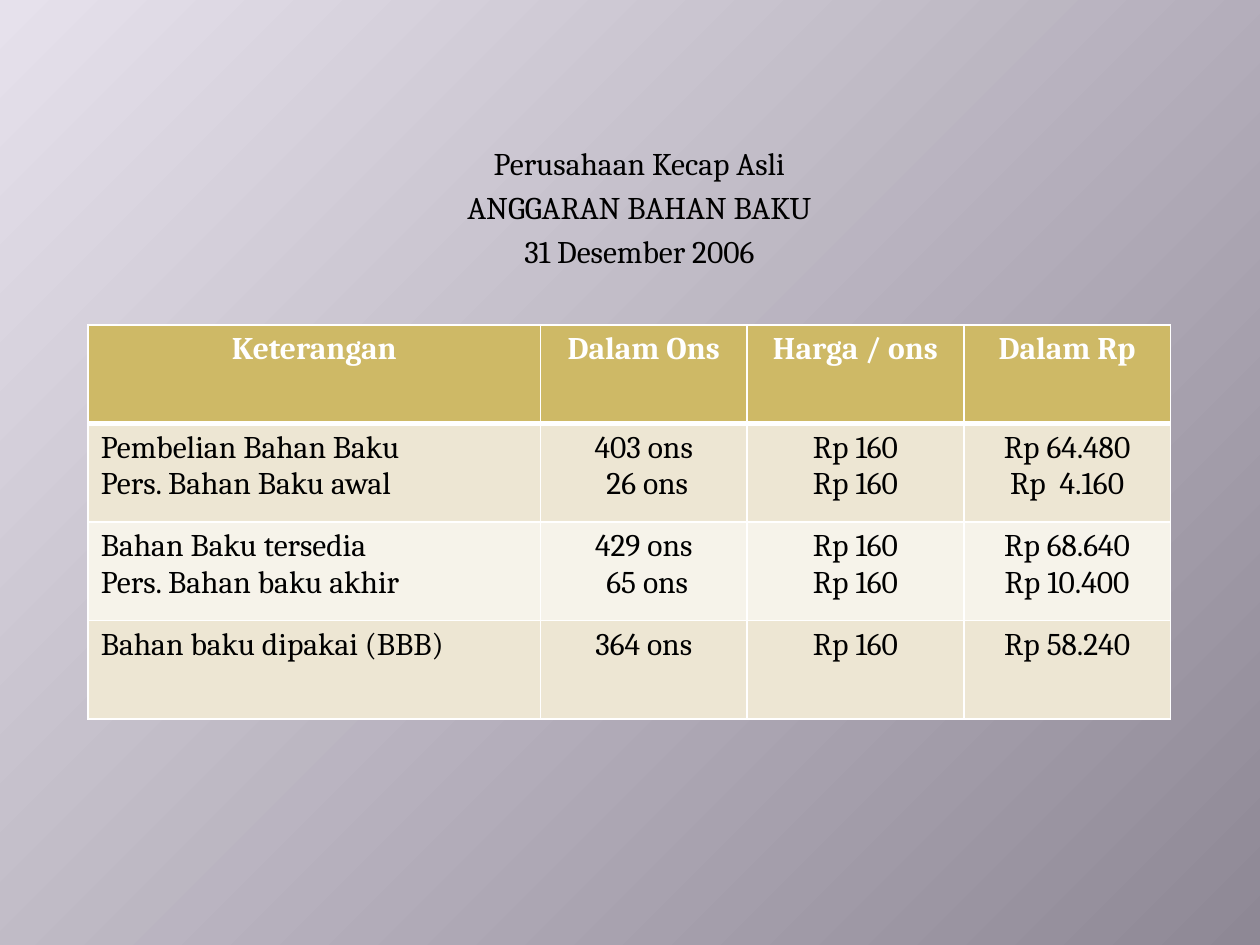
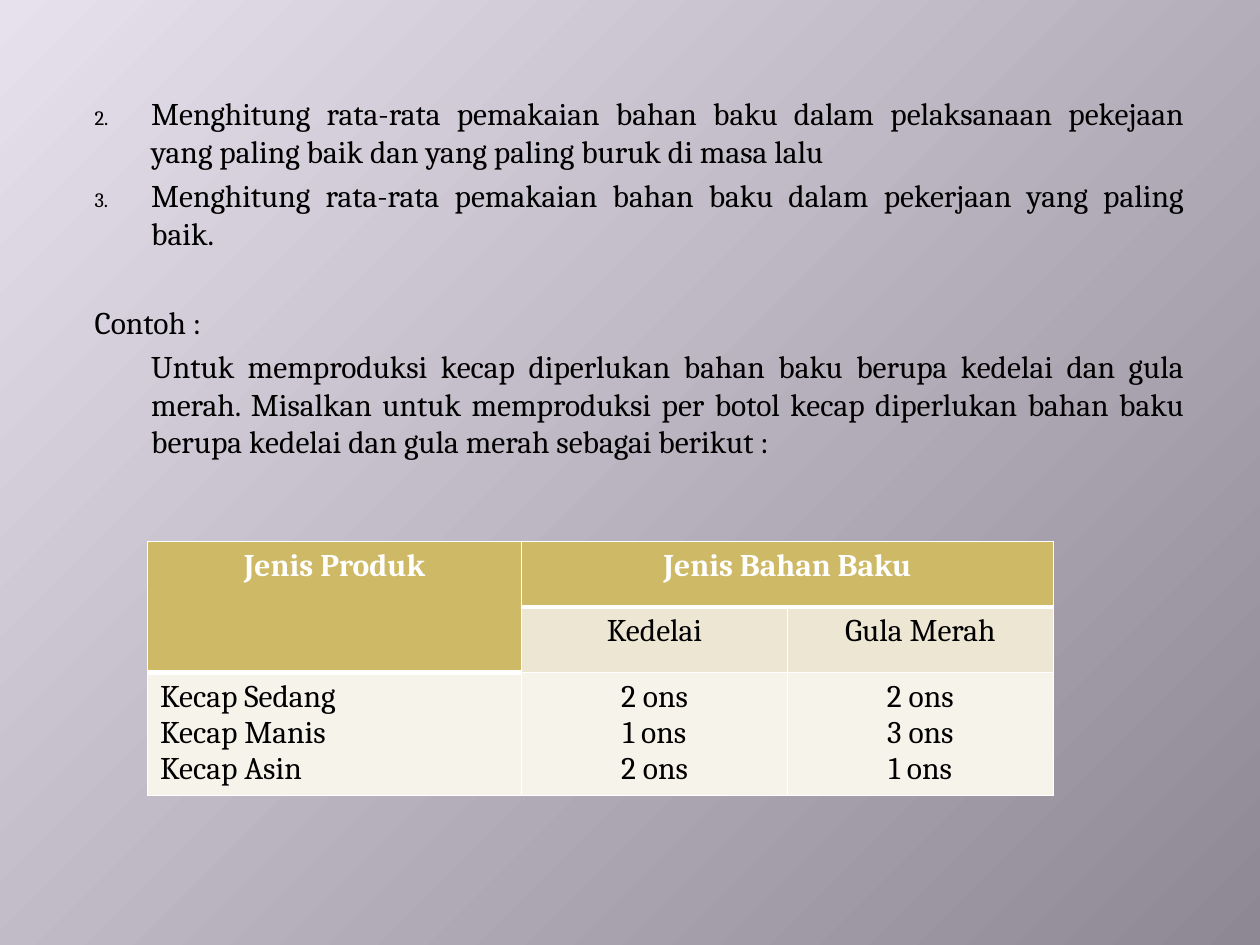
from dataclasses import dataclass

from lxml.etree import SubElement
from pptx import Presentation
from pptx.dml.color import RGBColor
from pptx.enum.text import MSO_AUTO_SIZE, PP_ALIGN
from pptx.oxml.ns import qn
from pptx.util import Emu, Inches, Pt

COLORS = {
    "light": "E6E1EC",
    "dark": "8E8895",
    "ink": "000000",
    "white": "FFFFFF",
    "header": "CEB966",
    "odd_row": "EDE6D3",
    "even_row": "F6F3EA",
}
BODY_FONT = {"name": "Cambria", "size": Pt(18), "bold": False}
HEADER_FONT = {**BODY_FONT, "bold": True}
SLIDE_WIDTH, SLIDE_HEIGHT = Inches(10), Inches(7.5)
TEXT_INDENT, HANGING = Inches(0.6), Inches(-0.45)
THIN, THICK = Pt(1), Pt(3)


@dataclass
class Box:
    """Hold a region in percent of the slide's width and height."""

    left: float
    top: float
    width: float
    height: float

    def lengths(self):
        """Return left, top, width and height as lengths."""
        return [
            Emu(int(share * side / 100))
            for share, side in (
                (self.left, SLIDE_WIDTH),
                (self.top, SLIDE_HEIGHT),
                (self.width, SLIDE_WIDTH),
                (self.height, SLIDE_HEIGHT),
            )
        ]


def rgb(color):
    """Return the named palette colour."""
    return RGBColor.from_string(COLORS[color])


def add_element(parent, tag, **attributes):
    """Append a drawing element with the given attributes."""
    return SubElement(
        parent, qn(tag), {key: str(value) for key, value in attributes.items()}
    )


def format_text(para, font, color):
    """Apply font values and a colour to every run of a paragraph."""
    for span in para.runs:
        for attribute, value in font.items():
            setattr(span.font, attribute, value)
        span.font.color.rgb = rgb(color)


def paint_background(master):
    """Give all slides a gradient spreading from the top left corner."""
    fill = master.background.fill
    fill.gradient()
    for stop, color in zip(fill.gradient_stops, ("light", "dark")):
        stop.color.rgb = rgb(color)
    gradient = master.element.find(".//" + qn("a:gradFill"))
    gradient.remove(gradient.find(qn("a:lin")))
    center = add_element(gradient, "a:path", path="circle")
    add_element(center, "a:fillToRect", r=100000, b=100000)


def add_page(deck):
    """Add a slide that keeps only its body placeholder."""
    page = deck.slides.add_slide(deck.slide_layouts[1])
    title = page.shapes.title.element
    title.getparent().remove(title)
    return page


def set_bullet(para, first_number, indent):
    """Set the indents and, if numbered, the small number of a paragraph."""
    properties = para._p.get_or_add_pPr()
    properties.set("marL", str(TEXT_INDENT))
    properties.set("indent", str(indent))
    if first_number is None:
        add_element(properties, "a:buNone")
        return
    bullet_color = add_element(properties, "a:buClr")
    add_element(bullet_color, "a:srgbClr", val=COLORS["ink"])
    add_element(properties, "a:buSzPct", val=65000)
    add_element(
        properties, "a:buAutoNum", type="arabicPeriod", startAt=first_number
    )


def fill_body(page, box, entries, alignment):
    """Place the body and write (text, first number, indent, gap) entries."""
    body = page.placeholders[1]
    body.left, body.top, body.width, body.height = box.lengths()
    frame = body.text_frame
    frame.auto_size = MSO_AUTO_SIZE.NONE
    frame.text = "\n".join(entry[0] for entry in entries)
    for para, (_, first_number, indent, gap) in zip(frame.paragraphs, entries):
        para.alignment = alignment
        set_bullet(para, first_number, indent)
        if gap:
            para.space_before = gap
        format_text(para, BODY_FONT, "ink")


def draw_borders(cell, top, bottom):
    """Draw white borders around a cell."""
    properties = cell._tc.get_or_add_tcPr()
    sides = {"a:lnL": THIN, "a:lnR": THIN, "a:lnT": top, "a:lnB": bottom}
    for tag, width in sides.items():
        line = add_element(properties, tag, w=width)
        solid = add_element(line, "a:solidFill")
        add_element(solid, "a:srgbClr", val=COLORS["white"])


def style_cell(table, row, column):
    """Style a cell as header or as part of a banded row."""

    def is_header(row_index):
        return row_index == 0 or table.cell(row_index, column).is_spanned

    cell = table.cell(row, column)
    header = is_header(row)
    below_header = not header and is_header(row - 1)
    draw_borders(cell, THICK if below_header else THIN, THICK if header else THIN)
    band = "odd_row" if row % 2 else "even_row"
    cell.fill.solid()
    cell.fill.fore_color.rgb = rgb("header" if header else band)
    centered = header or column > 0
    for para in cell.text_frame.paragraphs:
        para.alignment = PP_ALIGN.CENTER if centered else PP_ALIGN.LEFT
        if header:
            format_text(para, HEADER_FONT, "white")
        else:
            format_text(para, BODY_FONT, "ink")


def add_budget_table(page, box, columns, rows, content, merges=()):
    """Fill the box with a table whose columns and rows share it by weight."""
    left, top, width, height = box.lengths()
    table = page.shapes.add_table(
        len(rows), len(columns), left, top, width, height
    ).table
    for column, weight in zip(table.columns, columns):
        column.width = int(width * weight / sum(columns))
    for row, weight in zip(table.rows, rows):
        row.height = int(height * weight / sum(rows))
    for first, last in merges:
        table.cell(*first).merge(table.cell(*last))
    for row, texts in enumerate(content):
        for column, text in enumerate(texts):
            if text:
                table.cell(row, column).text = text
            style_cell(table, row, column)


def build_budget_page(deck):
    """Build the raw material budget slide."""
    page = add_page(deck)
    heading = ("Perusahaan Kecap Asli", "ANGGARAN BAHAN BAKU", "31 Desember 2006")
    fill_body(
        page,
        Box(5, 14.53, 90, 77.47),
        [(text, None, HANGING, None) for text in heading],
        PP_ALIGN.CENTER,
    )
    price = "Rp 160"
    content = (
        ("Keterangan", "Dalam Ons", "Harga / ons", "Dalam Rp"),
        (
            "Pembelian Bahan Baku\nPers. Bahan Baku awal",
            "403 ons\n 26 ons",
            f"{price}\n{price}",
            "Rp 64.480\nRp  4.160",
        ),
        (
            "Bahan Baku tersedia\nPers. Bahan baku akhir",
            "429 ons\n 65 ons",
            f"{price}\n{price}",
            "Rp 68.640\nRp 10.400",
        ),
        ("Bahan baku dipakai (BBB)", "364 ons", price, "Rp 58.240"),
    )
    add_budget_table(
        page,
        Box(7, 34.4, 85.9, 41.7),
        (3.59, 1.64, 1.72, 1.64),
        (1, 1, 1, 1),
        content,
    )


def build_usage_page(deck):
    """Build the slide on average usage with its example."""
    page = add_page(deck)
    entries = (
        (
            "Menghitung rata-rata pemakaian bahan baku dalam pelaksanaan "
            "pekejaan yang paling baik dan yang paling buruk di masa lalu",
            2, HANGING, None,
        ),
        (
            "Menghitung rata-rata pemakaian bahan baku dalam pekerjaan "
            "yang paling baik.",
            2, HANGING, None,
        ),
        ("Contoh :", None, HANGING, Pt(29)),
        (
            "Untuk memproduksi kecap diperlukan bahan baku berupa kedelai dan "
            "gula merah. Misalkan untuk memproduksi per botol kecap diperlukan "
            "bahan baku berupa kedelai dan gula merah sebagai berikut :",
            None, 0, None,
        ),
    )
    fill_body(page, Box(5, 9.33, 90, 82.67), entries, PP_ALIGN.JUSTIFY)
    content = (
        ("Jenis Produk", "Jenis Bahan Baku", ""),
        ("", "Kedelai", "Gula Merah"),
        (
            "Kecap Sedang\nKecap Manis\nKecap Asin",
            "2 ons\n1 ons\n2 ons",
            "2 ons\n3 ons\n1 ons",
        ),
    )
    add_budget_table(
        page,
        Box(11.7, 57.3, 71.9, 26.9),
        (2.97, 2.11, 2.11),
        (0.52, 0.52, 0.98),
        content,
        merges=(((0, 0), (1, 0)), ((0, 1), (0, 2))),
    )


def main():
    """Build and save the deck."""
    deck = Presentation()
    deck.slide_width, deck.slide_height = SLIDE_WIDTH, SLIDE_HEIGHT
    paint_background(deck.slide_master)
    build_budget_page(deck)
    build_usage_page(deck)
    deck.save("out.pptx")


if __name__ == "__main__":
    main()
